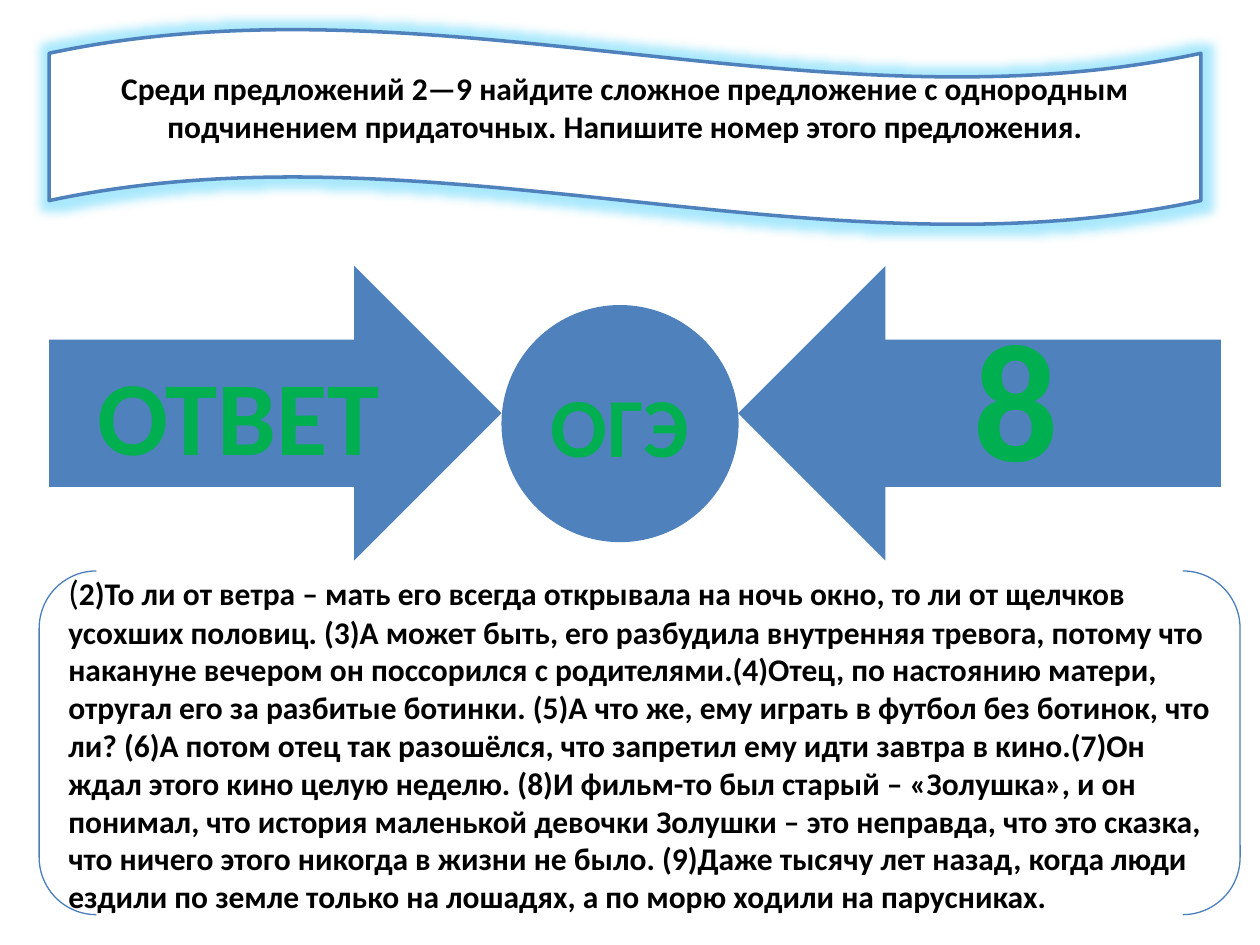
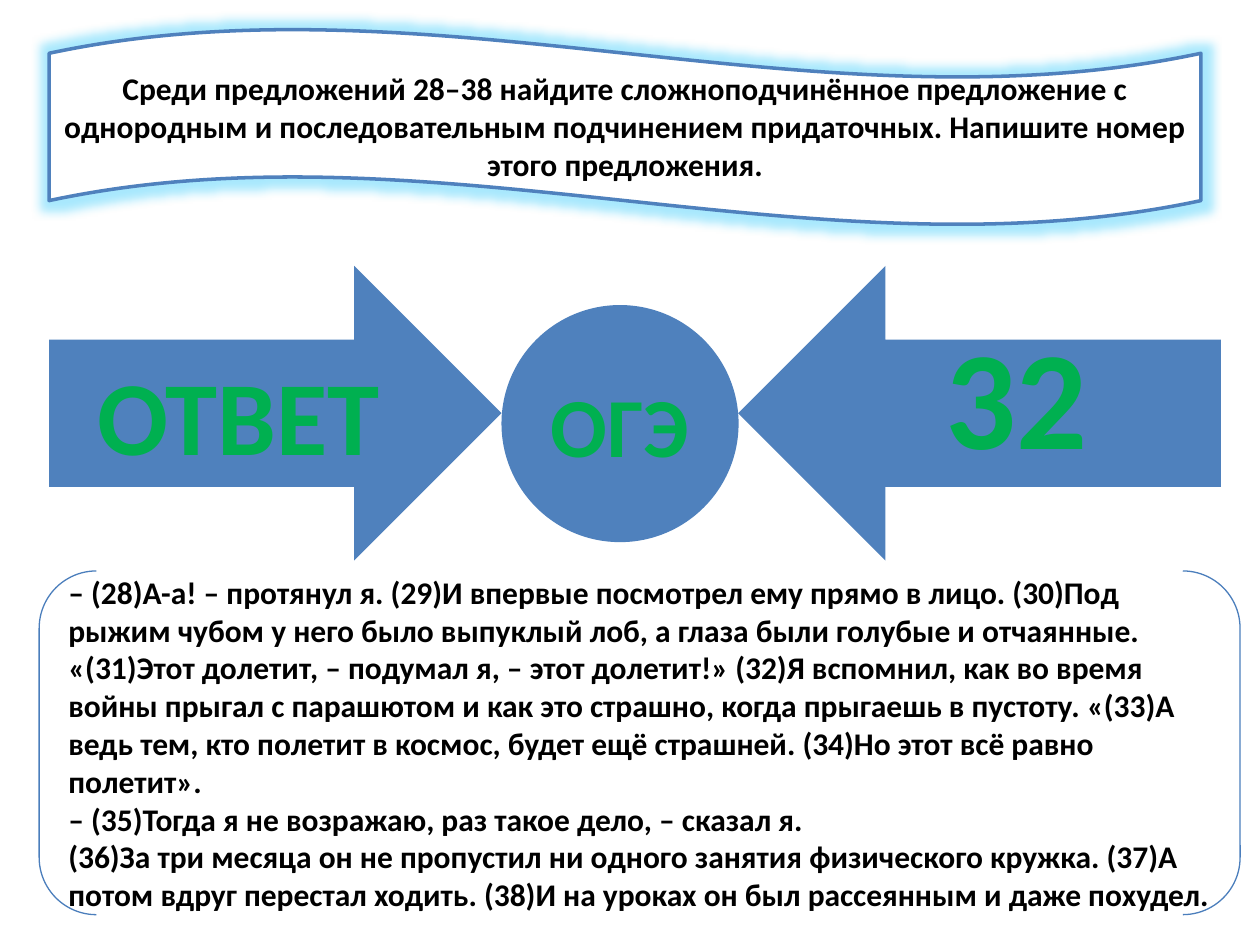
from lxml import etree
from pptx import Presentation
from pptx.dml.color import RGBColor
from pptx.enum.shapes import MSO_SHAPE
from pptx.enum.text import MSO_ANCHOR, MSO_AUTO_SIZE, PP_ALIGN
from pptx.oxml.ns import qn
from pptx.util import Cm, Pt

COLORS = {
    "white": "FFFFFF",
    "text": "000000",
    "blue": "4F81BD",
    "bracket": "4B7EBC",
    "green": "00B050",
    "glow": "28C7FA",
}
FONT = "Calibri"
LEFT_EDGE = 0.99
ARROW_TOP, ARROW_HEIGHT = 5.36, 5.94
CIRCLE_LEFT, CIRCLE_SIZE = 10.11, 4.78
ANSWER_LEFT, ANSWER_WIDTH = 14.88, 9.73

TASKS = [
    {
        "question": "Среди предложений 2—9 найдите сложное предложение с однородным "
                    "подчинением придаточных. Напишите номер этого предложения.",
        "answer": ("8", 96),
        "passage": [
            [("(", 20, False),
             ("2)То ли от ветра – мать его всегда открывала на ночь окно, то ли от щелчков "
              "усохших половиц. (3)А может быть, его разбудила внутренняя тревога, потому что "
              "накануне вечером он поссорился с родителями.(4)Отец, по настоянию матери, "
              "отругал его за разбитые ботинки. (5)А что же, ему играть в футбол без ботинок, "
              "что ли? (6)А потом отец так разошёлся, что запретил ему идти завтра в кино.(7)Он "
              "ждал этого кино целую неделю. (8)И фильм-то был старый – «Золушка», и он "
              "понимал, что история маленькой девочки Золушки – это неправда, что это сказка, "
              "что ничего этого никогда в жизни не было. (9)Даже тысячу лет назад, когда люди "
              "ездили по земле только на лошадях, а по морю ходили на парусниках.", 18, True)],
        ],
    },
    {
        "question": "Среди предложений 28–38 найдите сложноподчинённое предложение с "
                    "однородным и последовательным подчинением придаточных. Напишите номер "
                    "этого предложения.",
        "answer": ("32", 80),
        "passage": [
            [("– (28)А-а! – протянул я. (29)И впервые посмотрел ему прямо в лицо. (30)Под "
              "рыжим чубом у него было выпуклый лоб, а глаза были голубые и отчаянные.",
              18, True)],
            [("«(31)Этот долетит, – подумал я, – этот долетит!» (32)Я вспомнил, как во время "
              "войны прыгал с парашютом и как это страшно, когда прыгаешь в пустоту. «(33)А "
              "ведь тем, кто полетит в космос, будет ещё страшней. (34)Но этот всё равно "
              "полетит».", 18, True)],
            [("– (35)Тогда я не возражаю, раз такое дело, – сказал я.", 18, True)],
            [("(36)За три месяца он не пропустил ни одного занятия физического кружка. (37)А "
              "потом вдруг перестал ходить. (38)И на уроках он был рассеянным и даже похудел.",
              18, True)],
        ],
    },
]


def add_figure(slide, preset, box, fill=None, line=None, line_width=0.75):
    """Add a shadowless preset shape; box is left, top, width, height in cm."""
    figure = slide.shapes.add_shape(preset, *[Cm(length) for length in box])
    figure.shadow.inherit = False
    if fill:
        figure.fill.solid()
        figure.fill.fore_color.rgb = RGBColor.from_string(COLORS[fill])
    else:
        figure.fill.background()
    if line:
        figure.line.color.rgb = RGBColor.from_string(COLORS[line])
        figure.line.width = Pt(line_width)
    else:
        figure.line.fill.background()
    return figure


def write(frame, paragraphs, color, align=PP_ALIGN.CENTER):
    """Fill a text frame; each paragraph is a list of (text, size, bold) runs."""
    frame.word_wrap = True
    for index, runs in enumerate(paragraphs):
        paragraph = frame.add_paragraph() if index else frame.paragraphs[0]
        paragraph.alignment = align
        for text, size, bold in runs:
            run = paragraph.add_run()
            run.text = text
            run.font.name = FONT
            run.font.size = Pt(size)
            run.font.bold = bold
            run.font.color.rgb = RGBColor.from_string(COLORS[color])


prs = Presentation()
prs.slide_width, prs.slide_height = Cm(25.4), Cm(19.05)

for task in TASKS:
    slide = prs.slides.add_slide(prs.slide_layouts[5])

    # Question on a glowing wave
    wave = add_figure(slide, MSO_SHAPE.WAVE, (LEFT_EDGE, 0.58, 23.22, 3.96),
                      "white", "blue", 2)
    effects = wave._element.spPr.find(qn("a:effectLst"))
    glow = etree.SubElement(effects, qn("a:glow"), rad=str(Pt(11)))
    glow_color = etree.SubElement(glow, qn("a:srgbClr"), val=COLORS["glow"])
    etree.SubElement(glow_color, qn("a:alpha"), val="40000")

    question = slide.shapes.title
    question.left, question.top = Cm(LEFT_EDGE), Cm(1.27)
    question.width, question.height = Cm(23.22), Cm(2.6)
    question.text_frame.auto_size = MSO_AUTO_SIZE.NONE
    question.text_frame.vertical_anchor = MSO_ANCHOR.TOP
    write(question.text_frame, [[(task["question"], 18, True)]], "text")
    wave._element.addnext(question._element)

    # Arrows pointing at the exam circle
    label = add_figure(slide, MSO_SHAPE.RIGHT_ARROW,
                       (LEFT_EDGE, ARROW_TOP, CIRCLE_LEFT - LEFT_EDGE, ARROW_HEIGHT), "blue")
    write(label.text_frame, [[("ОТВЕТ", 60, True)]], "green")

    answer = add_figure(slide, MSO_SHAPE.LEFT_ARROW,
                        (ANSWER_LEFT, ARROW_TOP, ANSWER_WIDTH, ARROW_HEIGHT), "blue")
    answer.text_frame.margin_bottom = Cm(0.9)
    write(answer.text_frame, [[(*task["answer"], True)]], "green")

    exam = add_figure(slide, MSO_SHAPE.OVAL,
                      (CIRCLE_LEFT, 6.15, CIRCLE_SIZE, CIRCLE_SIZE), "blue")
    write(exam.text_frame, [[("ОГЭ", 48, True)]], "green")

    # Passage in brackets
    passage = add_figure(slide, MSO_SHAPE.DOUBLE_BRACKET, (0.79, 11.51, 24.21, 6.93),
                         line="bracket")
    write(passage.text_frame, task["passage"], "text", PP_ALIGN.LEFT)

prs.save("out.pptx")
